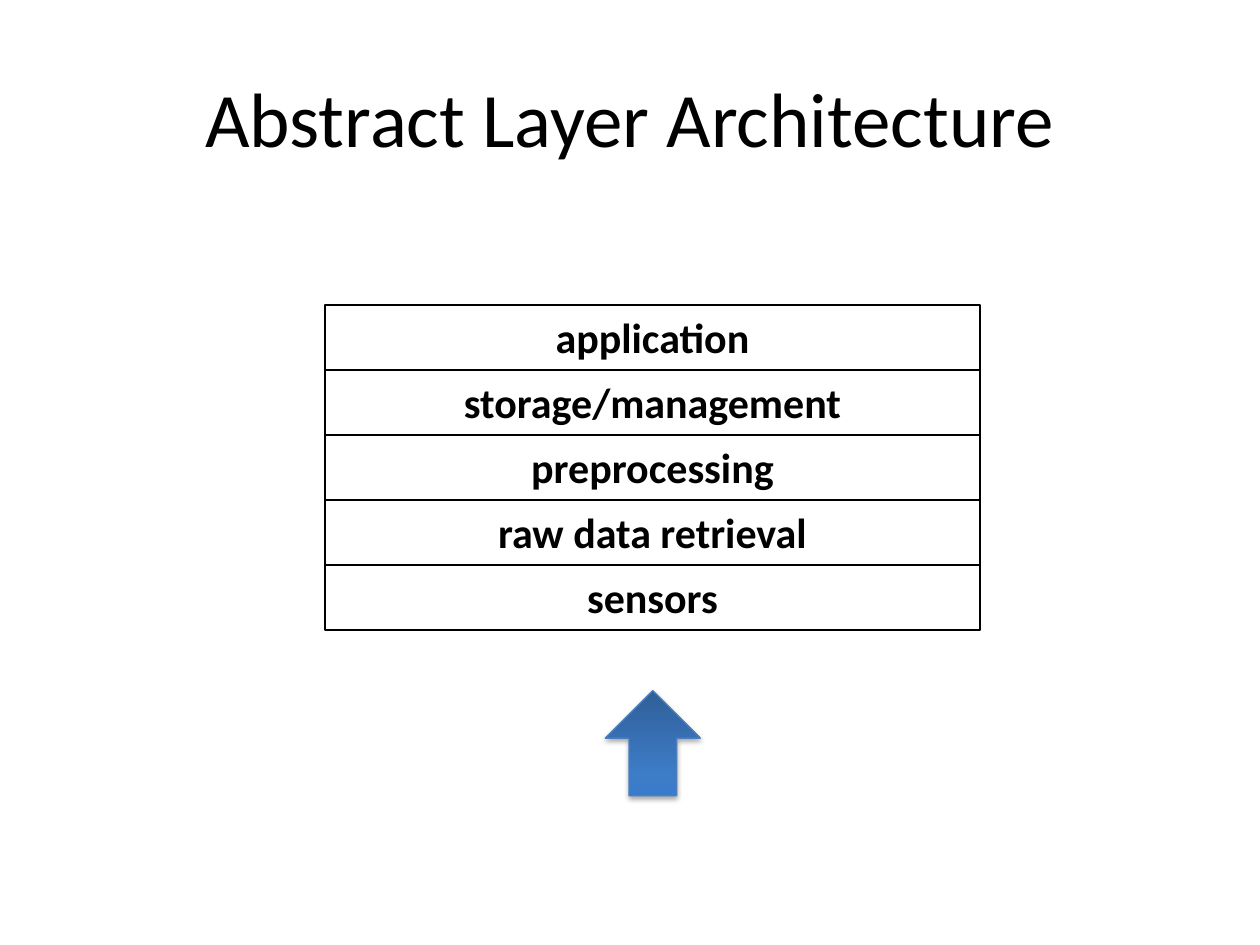
from lxml import etree
from pptx import Presentation
from pptx import util as u
from pptx.dml import color
from pptx.enum import shapes, text
from pptx.oxml import ns

LAYERS = ["application", "storage/management", "preprocessing",
          "raw data retrieval", "sensors"]
LEFT, TOP, WIDTH, HEIGHT = 6.55, 6.15, 13.21, 1.31


def rgb(value):
    """Return a colour from a hex string."""
    return color.RGBColor.from_string(value)


def child(parent, tag, **attrs):
    """Append a DrawingML element to a parent."""
    return etree.SubElement(parent, ns.qn(f"a:{tag}"), attrs)


def add_run(p, words, size, bold=False):
    """Add a centred black run to a paragraph."""
    p.alignment = text.PP_ALIGN.CENTER
    r = p.add_run()
    r.text = words
    r.font.name = "Calibri"
    r.font.size = u.Pt(size)
    r.font.bold = bold
    r.font.color.rgb = rgb("000000")


def add_title(s, words):
    """Place and fill the title placeholder."""
    sp = s.shapes.title
    sp.left, sp.top, sp.width, sp.height = (
        u.Cm(n) for n in (1.27, 0.76, 22.86, 3.18))
    tf = sp.text_frame
    tf.vertical_anchor = text.MSO_ANCHOR.MIDDLE
    add_run(tf.paragraphs[0], words, 44)


def add_shape(s, kind, box, line, weight):
    """Add an outlined preset shape without a shadow."""
    sp = s.shapes.add_shape(kind, *(u.Cm(n) for n in box))
    sp.shadow.inherit = False
    sp.line.color.rgb = rgb(line)
    sp.line.width = u.Pt(weight)
    return sp


def add_layer(s, row, words):
    """Add one layer of the stack."""
    box = (LEFT, TOP + row * HEIGHT, WIDTH, HEIGHT)
    sp = add_shape(s, shapes.MSO_SHAPE.RECTANGLE, box, "000000", 1)
    sp.fill.background()
    tf = sp.text_frame
    tf.word_wrap = True
    tf.auto_size = text.MSO_AUTO_SIZE.SHAPE_TO_FIT_TEXT
    tf.vertical_anchor = text.MSO_ANCHOR.TOP
    add_run(tf.paragraphs[0], words, 24, True)


def set_gradient(sp, stops, angle):
    """Fill a shape with a linear gradient of several stops."""
    sp.fill.gradient()
    grad = sp.fill._fill._gradFill
    for part in list(grad):
        grad.remove(part)
    grad.set("rotWithShape", "1")
    gs_list = child(grad, "gsLst")
    for percent, value in stops:
        gs = child(gs_list, "gs", pos=str(percent * 1000))
        child(gs, "srgbClr", val=value)
    child(grad, "lin", ang=str(angle * 60000), scaled="0")


def set_shadow(sp, value, alpha, blur, distance, angle):
    """Give a shape a soft outer shadow."""
    effects = sp._element.spPr.find(ns.qn("a:effectLst"))
    shadow = child(effects, "outerShdw", blurRad=str(u.Pt(blur)),
                   dist=str(u.Pt(distance)), dir=str(angle * 60000),
                   rotWithShape="0")
    child(child(shadow, "srgbClr", val=value), "alpha", val=str(alpha * 1000))


def add_arrow(s):
    """Add the block arrow pointing up at the stack."""
    sp = add_shape(s, shapes.MSO_SHAPE.DOWN_ARROW,
                   (12.2, 13.92, 1.92, 2.12), "4B7EBC", 0.75)
    sp.rotation = 180
    set_gradient(sp, [(0, "2F5F99"), (80, "3D7CC7"), (100, "3A7CCB")], 270)
    set_shadow(sp, "000000", 35, 3.1, 1.8, 90)


def main():
    """Build and save the slide."""
    prs = Presentation()
    prs.slide_width, prs.slide_height = u.Cm(25.4), u.Cm(19.05)
    s = prs.slides.add_slide(prs.slide_layouts[5])
    add_title(s, "Abstract Layer Architecture")
    for row, words in reversed(list(enumerate(LAYERS))):
        add_layer(s, row, words)
    add_arrow(s)
    prs.save("out.pptx")


if __name__ == "__main__":
    main()
